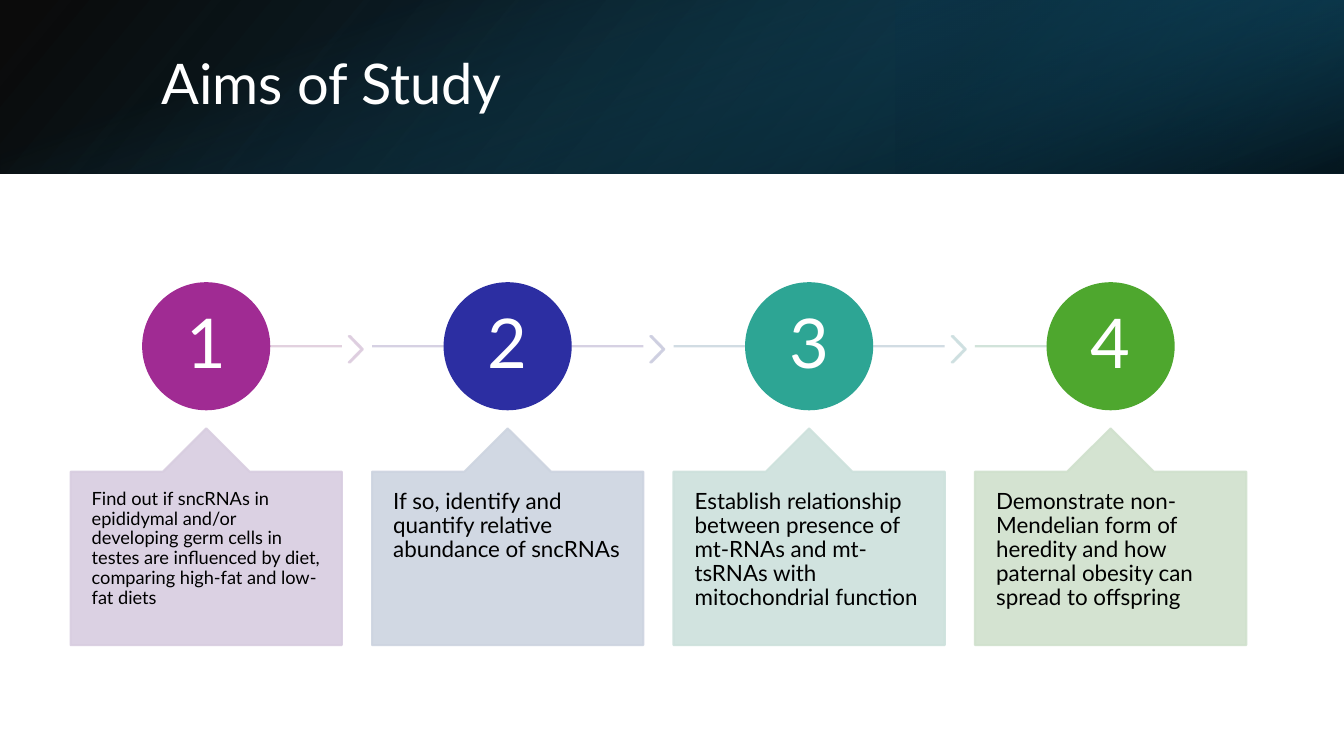
from collections import namedtuple
from dataclasses import dataclass

from lxml.etree import SubElement
from pptx import Presentation
from pptx.dml.color import RGBColor
from pptx.enum.shapes import MSO_CONNECTOR, MSO_SHAPE
from pptx.enum.text import MSO_ANCHOR, MSO_AUTO_SIZE, PP_ALIGN
from pptx.oxml.ns import qn
from pptx.util import Inches, Pt

Box = namedtuple("Box", "left top width height")
Step = namedtuple("Step", "text size circle card link chevron link_start link_end")


@dataclass(frozen=True)
class Theme:
    """Hold the colours, font and type sizes of the slide."""
    font: str = "Lato"
    light: str = "FFFFFF"
    dark: str = "000000"
    title_size: int = 40
    number_size: int = 49
    line_width: float = 1.5
    opacity: int = 90


THEME = Theme()
SLIDE = Box(0, 0, 13.33, 7.5)
HEADER = Box(0, 0, SLIDE.width, 1.72)
PROCESS = Box(0.7, 2.81, 11.66, 3.59)
COLUMN_PITCH = 2.99
CARD_WIDTH = 2.69
CIRCLE_SIZE = 1.25
CARD_OFFSET = 1.44

STEPS = [
    Step("Find out if sncRNAs in epididymal and/or developing germ cells in testes are "
         "influenced by diet, comparing high-fat and low-fat diets",
         13, "A02B93", "D8CDE0", "DFCDDC", "DDCDDF", 1.5, CARD_WIDTH),
    Step("If so, identify and quantify relative abundance of sncRNAs",
         16, "2C2EA2", "CDD4E0", "D2CDE0", "CDCEE0", 0, CARD_WIDTH),
    Step("Establish relationship between presence of mt-RNAs and mt-tsRNAs with "
         "mitochondrial function",
         16, "2DA594", "CDE1DC", "CDD9E0", "CDDFE0", 0, CARD_WIDTH),
    Step("Demonstrate non-Mendelian form of heredity and how paternal obesity can "
         "spread to offspring",
         16, "4EA72E", "D0E1CD", "CDE1D6", None, 0, CARD_WIDTH / 2),
]


def set_values(target, values):
    """Set each named attribute of the target."""
    for name, value in values.items():
        setattr(target, name, value)


def set_opacity(element, percent):
    """Give every colour below the element the same opacity."""
    for color in element.iter(qn("a:srgbClr")):
        SubElement(color, qn("a:alpha"), val=str(percent * 1000))


def add_preset(slide, preset, box, adjustments=()):
    """Add a preset shape without shadow in the box."""
    shape = slide.shapes.add_shape(preset, *map(Inches, box))
    shape.shadow.inherit = False
    for index, value in enumerate(adjustments):
        shape.adjustments[index] = value
    return shape


def paint(shape, color, opacity=100):
    """Fill and outline the shape in one colour."""
    shape.fill.solid()
    shape.fill.fore_color.rgb = RGBColor.from_string(color)
    shape.line.color.rgb = RGBColor.from_string(color)
    shape.line.width = Pt(THEME.line_width)
    if opacity < 100:
        set_opacity(shape.fill._xPr, opacity)


def write(shape, text, size, color, anchor, align, margins):
    """Write one formatted paragraph in the shape."""
    frame = shape.text_frame
    horizontal, vertical = map(Inches, margins)
    set_values(frame, {
        "text": text, "word_wrap": True, "auto_size": MSO_AUTO_SIZE.NONE,
        "vertical_anchor": anchor, "margin_left": horizontal,
        "margin_right": horizontal, "margin_top": vertical, "margin_bottom": vertical,
    })
    paragraph = frame.paragraphs[0]
    set_values(paragraph, {"alignment": align, "line_spacing": 0.9})
    font = paragraph.runs[0].font
    set_values(font, {"name": THEME.font, "size": Pt(size)})
    font.color.rgb = RGBColor.from_string(color)


def add_gradient(slide, box, stops, angle, rotation=0, flipped=False):
    """Add a borderless rectangle with a translucent two-stop gradient."""
    shape = add_preset(slide, MSO_SHAPE.RECTANGLE, box)
    shape.rotation = rotation
    if flipped:
        shape._element.spPr.xfrm.set("flipH", "1")
    shape.line.fill.background()
    shape.fill.gradient()
    shape.fill.gradient_angle = 360 - angle
    for stop, (position, color, opacity) in zip(shape.fill.gradient_stops, stops):
        stop.position = position
        stop.color.rgb = RGBColor.from_string(color)
        set_opacity(stop._gs, opacity)


def add_header(slide, box):
    """Layer the gradients of the header and place the title on them."""
    third = box.width / 3
    right = Box(box.left + 2 * third, box.top, third, box.height)
    inset = (box.width - box.height) / 2
    upright = Box(box.left + inset, box.top - inset, box.height, box.width)
    add_gradient(slide, box, [(0, "000000", 96), (1, "104862", 100)], 140, flipped=True)
    add_gradient(slide, right, [(0.19, "0B3041", 68), (1, "156082", 79)], 320, 180, True)
    add_gradient(slide, upright, [(0.23, "156082", 0), (0.99, "000000", 74)], 340, 90)
    title = slide.shapes.title
    slide.shapes._spTree.append(title._element)
    set_values(title, {
        "left": Inches(box.left + 1.5), "top": Inches(box.top + 0.38),
        "width": Inches(10.98), "height": Inches(0.96),
    })
    write(title, "Aims of Study", THEME.title_size, THEME.light,
          MSO_ANCHOR.MIDDLE, PP_ALIGN.LEFT, (0.1, 0.05))


def add_link(slide, start, end, top, color):
    """Draw a horizontal link line."""
    line = slide.shapes.add_connector(
        MSO_CONNECTOR.STRAIGHT, *map(Inches, (start, top, end, top)))
    line.line.color.rgb = RGBColor.from_string(color)
    line.line.width = Pt(THEME.line_width)
    set_opacity(line._element.spPr, THEME.opacity)
    SubElement(line._element.spPr, qn("a:effectLst"))


def add_step(slide, box, number, step):
    """Draw one numbered step with its link, circle and callout."""
    middle = box.top + CIRCLE_SIZE / 2
    add_link(slide, box.left + step.link_start, box.left + step.link_end,
             middle, step.link)
    if step.chevron:
        chevron = add_preset(slide, MSO_SHAPE.CHEVRON,
                             Box(box.left + 2.76, middle - 0.1, 0.14, 0.26), [0.9])
        paint(chevron, step.chevron, THEME.opacity)
    circle = add_preset(slide, MSO_SHAPE.OVAL, Box(
        box.left + (box.width - CIRCLE_SIZE) / 2, box.top, CIRCLE_SIZE, CIRCLE_SIZE))
    paint(circle, step.circle)
    write(circle, str(number), THEME.number_size, THEME.light,
          MSO_ANCHOR.MIDDLE, PP_ALIGN.CENTER, (0.05, 0.05))
    card = add_preset(slide, MSO_SHAPE.UP_ARROW_CALLOUT, Box(
        box.left, box.top + CARD_OFFSET, box.width, box.height - CARD_OFFSET),
        [0.5, 0.2, 0.2, 1])
    paint(card, step.card, THEME.opacity)
    write(card, step.text, step.size, THEME.dark,
          MSO_ANCHOR.TOP, PP_ALIGN.LEFT, (0.21, 0.18))


def add_process(slide, box):
    """Place the steps in equal columns across the box."""
    for index, step in enumerate(STEPS):
        column = Box(box.left + index * COLUMN_PITCH, box.top, CARD_WIDTH, box.height)
        add_step(slide, column, index + 1, step)


def main():
    """Build and save the presentation."""
    presentation = Presentation()
    set_values(presentation, {
        "slide_width": Inches(SLIDE.width), "slide_height": Inches(SLIDE.height)})
    slide = presentation.slides.add_slide(presentation.slide_layouts[5])
    add_header(slide, HEADER)
    add_process(slide, PROCESS)
    presentation.save("out.pptx")


if __name__ == "__main__":
    main()
